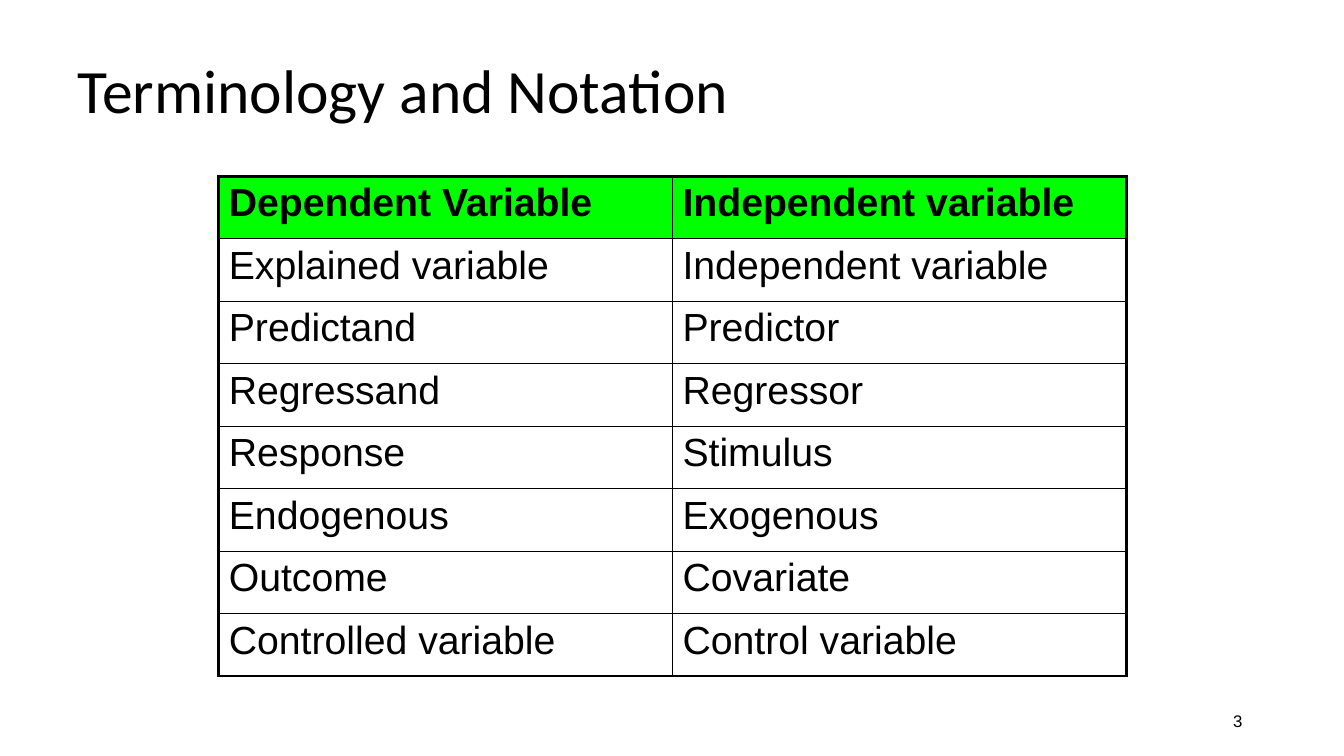
from lxml import etree
from pptx import Presentation
from pptx.dml.color import RGBColor
from pptx.enum.text import MSO_ANCHOR, PP_ALIGN
from pptx.oxml.ns import qn
from pptx.util import Pt

MIDDLE = MSO_ANCHOR.MIDDLE
LEFT, RIGHT = PP_ALIGN.LEFT, PP_ALIGN.RIGHT

TITLE = "Terminology and Notation"
PAGE_NUMBER = "3"
TERMS = [
    ("Dependent Variable", "Independent variable"),
    ("Explained variable", "Independent variable"),
    ("Predictand", "Predictor"),
    ("Regressand", "Regressor"),
    ("Response", "Stimulus"),
    ("Endogenous", "Exogenous"),
    ("Outcome", "Covariate"),
    ("Controlled variable", "Control variable"),
]
COLORS = {"ink": "000000", "header": "00FF00"}

PX = 9144  # 100 px to the inch
SLIDE_SIZE = (1333, 750)
TITLE_BOX = (67, 30, 1200, 125)
NUMBER_BOX = (942, 695, 300, 40)
TABLE_LEFT, TABLE_TOP = 217, 175
COLUMN_WIDTH, ROW_HEIGHT = 450, 62
OUTER_LINE, INNER_LINE = Pt(2.25), Pt(1)


def style_text(paragraph, text, font_name, size, bold=False):
    run = paragraph.add_run()
    run.text = text
    font_values = {"name": font_name, "size": Pt(size), "bold": bold}
    for key, value in font_values.items():
        setattr(run.font, key, value)
    run.font.color.rgb = RGBColor.from_string(COLORS["ink"])


def add_label(slide, box, text, font_name, size, align=LEFT, line_spacing=1.0):
    frame = slide.shapes.add_textbox(*(v * PX for v in box)).text_frame
    frame.word_wrap = True
    frame.vertical_anchor = MIDDLE
    paragraph = frame.paragraphs[0]
    paragraph.alignment = align
    paragraph.line_spacing = line_spacing
    style_text(paragraph, text, font_name, size)


def add_borders(cell, outer_sides):
    """Draw all four cell edges, heavier on the table's outline."""
    properties = cell._tc.get_or_add_tcPr()
    for side, is_outer in outer_sides.items():
        width = OUTER_LINE if is_outer else INNER_LINE
        line = etree.SubElement(properties, qn(f"a:ln{side}"), w=str(int(width)))
        fill = etree.SubElement(line, qn("a:solidFill"))
        etree.SubElement(fill, qn("a:srgbClr"), val=COLORS["ink"])


def add_terms_table(slide):
    row_count, column_count = len(TERMS), len(TERMS[0])
    table = slide.shapes.add_table(
        row_count, column_count, TABLE_LEFT * PX, TABLE_TOP * PX,
        column_count * COLUMN_WIDTH * PX, row_count * ROW_HEIGHT * PX,
    ).table
    table.first_row = table.horz_banding = False
    for r, pair in enumerate(TERMS):
        for c, term in enumerate(pair):
            cell = table.cell(r, c)
            is_header = r == 0
            add_borders(cell, {
                "L": c == 0,
                "R": c == column_count - 1,
                "T": is_header,
                "B": r == row_count - 1,
            })
            if is_header:
                cell.fill.solid()
                cell.fill.fore_color.rgb = RGBColor.from_string(COLORS["header"])
            else:
                cell.fill.background()
            style_text(cell.text_frame.paragraphs[0], term, "Arial", 28, is_header)


def main():
    deck = Presentation()
    deck.slide_width, deck.slide_height = (v * PX for v in SLIDE_SIZE)
    slide = deck.slides.add_slide(deck.slide_layouts[6])
    add_label(slide, NUMBER_BOX, PAGE_NUMBER, "Arial", 12, align=RIGHT)
    add_label(slide, TITLE_BOX, TITLE, "Calibri", 44, line_spacing=0.9)
    add_terms_table(slide)
    deck.save("out.pptx")


if __name__ == "__main__":
    main()
